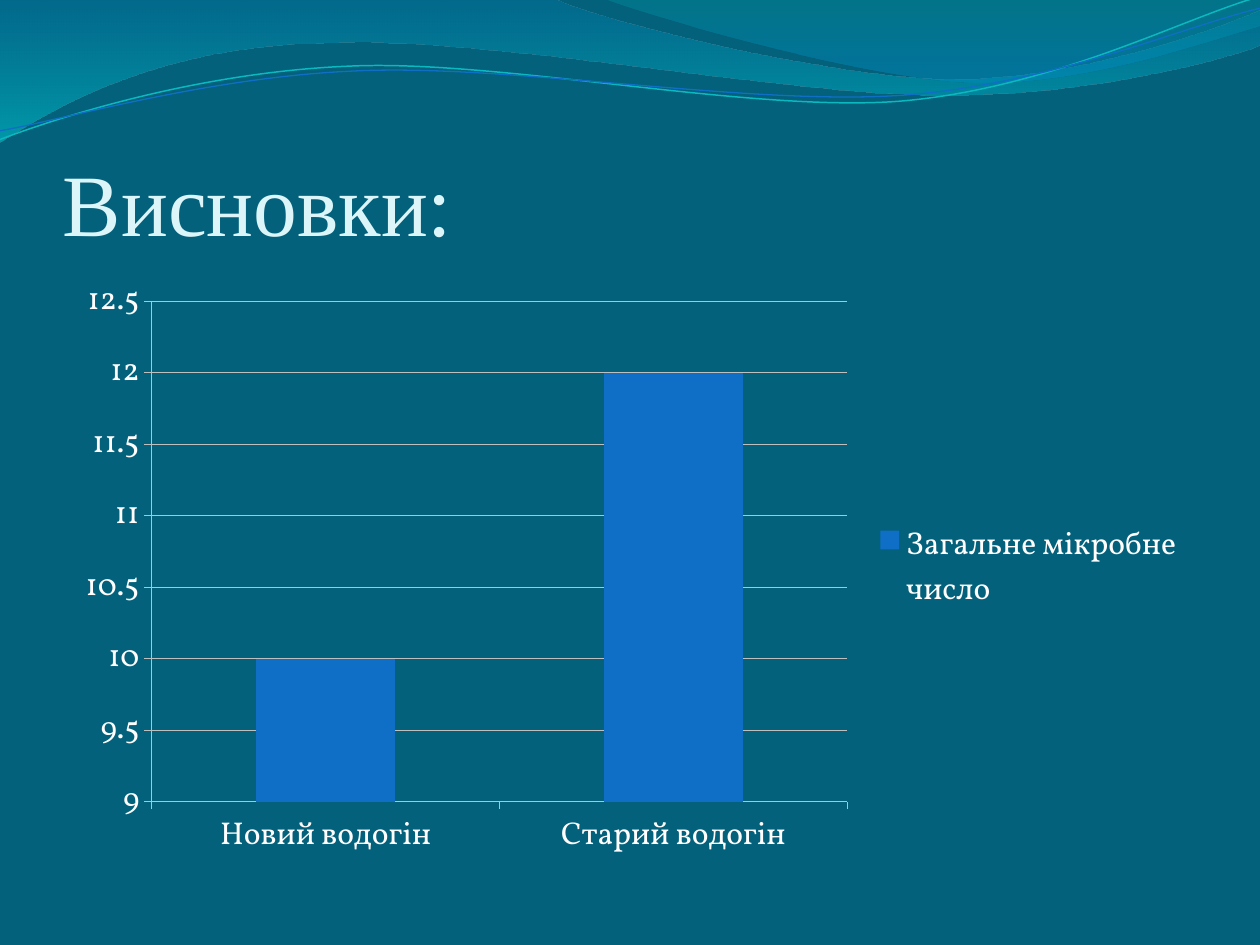
from lxml import etree
from pptx import Presentation, util as u
from pptx.chart.data import CategoryChartData
from pptx.dml.color import RGBColor
from pptx.enum import chart as charts, text
from pptx.oxml import parse_xml
from pptx.oxml.ns import nsdecls, qn

PX_PER_INCH = 126
LINE_TILT = -2.7
COLORS = {
    "page": "04617B", "title": "DBF5F9", "label": "FFFFFF",
    "bar": "0F6FC6", "axis": "BFBFBF", "teal_line": "0AB8BF",
    "wave_top": "0074A1", "wave_bottom": "00C6CF",
    "crest_top": "00A1A9", "crest_bottom": "008BBF",
}

# Outlines: a start point, then tuples of one point (line) or three (curve).
WAVE = [(0, 0), ((554, -1),),
        ((600, 21), (837, 79), (955, 79)), ((1075, 79), (1207, 33), (1260, 11)),
        ((1261, 45),),
        ((1239, 55), (1096, 96), (940, 95)), ((784, 95), (481, 35), (324, 43)),
        ((163, 45), (58, 105), (-1, 142))]
CREST = [(604, -1), ((641, 14), (859, 78), (969, 82)),
         ((1079, 87), (1211, 40), (1260, 26)), ((1260, 0),)]
# The two lines are given level and then tilted.
TEAL_LINE = [(-3, 110), ((58, 90), (199, 52), (350, 53)),
             ((499, 53), (745, 118), (896, 114)), ((1049, 109), (1184, 45), (1260, 27))]
BLUE_LINE = [(-2, 101), ((57, 94), (207, 57), (357, 58)),
             ((509, 58), (750, 112), (902, 108)), ((1052, 104), (1187, 52), (1262, 38))]


def px(value):
    return u.Emu(round(value * u.Inches(1) / PX_PER_INCH))


def color(name):
    return RGBColor.from_string(COLORS[name])


def add_outline(page, outline, closed):
    """Build a freeform through the end points, then bend its curved segments."""
    start, *segments = outline
    builder = page.shapes.build_freeform(px(start[0]), px(start[1]))
    ends = [segment[-1] for segment in segments]
    builder.add_line_segments([(px(x), px(y)) for x, y in ends], close=closed)
    shape = builder.convert_to_shape()
    shape.shadow.inherit = False
    lines = list(shape._element.iter(qn("a:lnTo")))
    for line, segment in zip(lines, segments):
        if len(segment) == 1:
            continue
        curve = etree.Element(qn("a:cubicBezTo"))
        for x, y in segment:
            etree.SubElement(curve, qn("a:pt"), x=str(px(x) - shape.left),
                             y=str(px(y) - shape.top))
        line.getparent().replace(line, curve)
    return shape


def add_wave(page, outline, stops):
    """Add a filled wave; stops are (percent, colour name, opacity percent)."""
    shape = add_outline(page, outline, True)
    shape.line.fill.background()
    gradient = parse_xml(f'<a:gradFill {nsdecls("a")} rotWithShape="1"><a:gsLst/>'
                         '<a:lin ang="5400000" scaled="0"/></a:gradFill>')
    for position, name, opacity in stops:
        stop = etree.SubElement(gradient[0], qn("a:gs"), pos=str(position * 1000))
        tint = etree.SubElement(stop, qn("a:srgbClr"), val=COLORS[name])
        etree.SubElement(tint, qn("a:alpha"), val=str(opacity * 1000))
    shape._element.spPr.find(qn("a:custGeom")).addnext(gradient)


def add_wave_line(page, outline, name, width):
    shape = add_outline(page, outline, False)
    shape.rotation = LINE_TILT
    shape.fill.background()
    shape.line.color.rgb = color(name)
    shape.line.width = u.Pt(width)


def add_title(page, words):
    box = page.shapes.add_textbox(px(63), px(97), px(1134), px(157))
    frame = box.text_frame
    frame.word_wrap = True
    frame.vertical_anchor = text.MSO_ANCHOR.BOTTOM
    frame.margin_left = frame.margin_right = frame.margin_bottom = 0
    frame.margin_top = px(6)
    para = frame.paragraphs[0]
    para.text = words
    para.font.size = u.Pt(50)
    para.font.name = "Times New Roman"
    para.font.color.rgb = color("title")


def style_line(line):
    line.color.rgb = color("axis")
    line.width = u.Pt(0.75)


def add_microbe_chart(page):
    data = CategoryChartData()
    data.categories = ["Новий водогін", "Старий водогін"]
    data.add_series("Загальне мікробне число", (10, 12))
    chart = page.shapes.add_chart(charts.XL_CHART_TYPE.COLUMN_CLUSTERED,
                                  px(63), px(267), px(1134), px(604), data).chart
    chart.has_title = False
    chart.font.size = u.Pt(18)
    chart.font.name = "Vollkorn"
    chart.font.color.rgb = color("label")
    chart.has_legend = True
    chart.legend.position = charts.XL_LEGEND_POSITION.RIGHT
    chart.legend.include_in_layout = False

    plot = chart.plots[0]
    plot.gap_width = 150
    plot.vary_by_categories = False
    fill = plot.series[0].format.fill
    fill.solid()
    fill.fore_color.rgb = color("bar")

    values = chart.value_axis
    values.minimum_scale, values.maximum_scale, values.major_unit = 9, 12.5, 0.5
    values.has_major_gridlines = True
    style_line(values.major_gridlines.format.line)
    for axis in (chart.category_axis, values):
        axis.major_tick_mark = charts.XL_TICK_MARK.OUTSIDE
        axis.tick_labels.number_format = "General"
        axis.tick_labels.number_format_is_linked = False
        style_line(axis.format.line)


def main():
    deck = Presentation()
    deck.slide_width, deck.slide_height = px(1260), px(945)
    page = deck.slides.add_slide(deck.slide_layouts[6])
    page.background.fill.solid()
    page.background.fill.fore_color.rgb = color("page")
    add_wave(page, WAVE, [(0, "wave_top", 45), (100, "wave_bottom", 55)])
    add_wave(page, CREST, [(0, "crest_top", 30), (80, "crest_bottom", 45)])
    add_wave_line(page, TEAL_LINE, "teal_line", 0.85)
    add_wave_line(page, BLUE_LINE, "bar", 0.75)
    add_title(page, "Висновки:")
    add_microbe_chart(page)
    deck.save("out.pptx")


if __name__ == "__main__":
    main()
